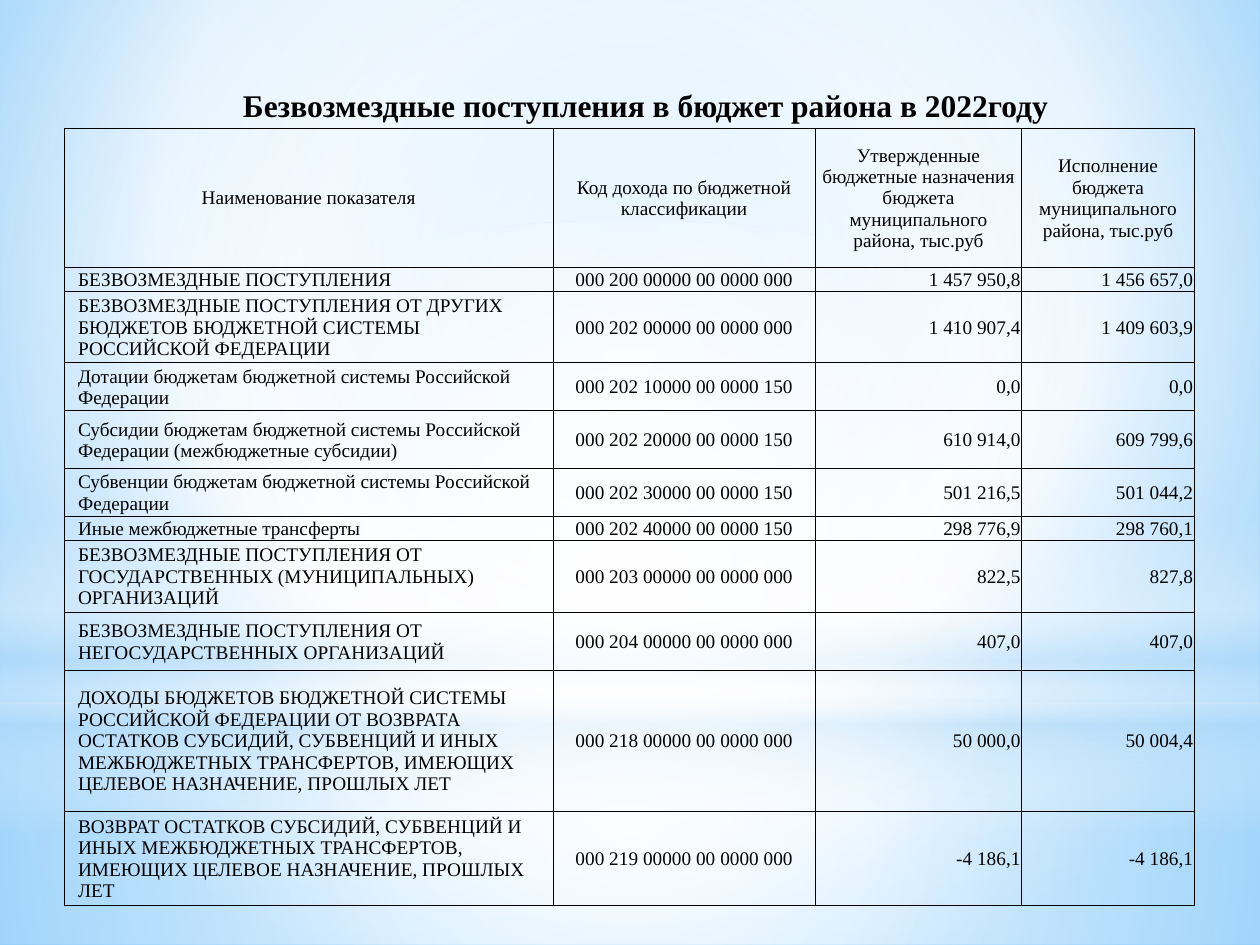
from dataclasses import dataclass

from lxml import etree
from pptx import Presentation
from pptx import util as u
from pptx.dml.color import RGBColor
from pptx.enum import shapes, text
from pptx.oxml.ns import qn

TITLE = "Безвозмездные поступления в бюджет района в 2022году"
HEADER = (
    "Наименование показателя",
    "Код дохода по бюджетной классификации",
    "Утвержденные бюджетные назначения бюджета муниципального района, тыс.руб",
    "Исполнение бюджета муниципального района, тыс.руб",
)
HEADER_HEIGHT = 1.1
# row height, indicator, income code, approved, executed
INCOME = [
    (0.19, "БЕЗВОЗМЕЗДНЫЕ ПОСТУПЛЕНИЯ",
     "000 200 00000 00 0000 000", "1 457 950,8", "1 456 657,0"),
    (0.57, "БЕЗВОЗМЕЗДНЫЕ ПОСТУПЛЕНИЯ ОТ ДРУГИХ БЮДЖЕТОВ БЮДЖЕТНОЙ СИСТЕМЫ РОССИЙСКОЙ ФЕДЕРАЦИИ",
     "000 202 00000 00 0000 000", "1 410 907,4", "1 409 603,9"),
    (0.38, "Дотации бюджетам бюджетной системы Российской Федерации",
     "000 202 10000 00 0000 150", "0,0", "0,0"),
    (0.46, "Субсидии бюджетам бюджетной системы Российской Федерации (межбюджетные субсидии)",
     "000 202 20000 00 0000 150", "610 914,0", "609 799,6"),
    (0.38, "Субвенции бюджетам бюджетной системы Российской Федерации",
     "000 202 30000 00 0000 150", "501 216,5", "501 044,2"),
    (0.19, "Иные межбюджетные трансферты",
     "000 202 40000 00 0000 150", "298 776,9", "298 760,1"),
    (0.57, "БЕЗВОЗМЕЗДНЫЕ ПОСТУПЛЕНИЯ ОТ ГОСУДАРСТВЕННЫХ (МУНИЦИПАЛЬНЫХ) ОРГАНИЗАЦИЙ",
     "000 203 00000 00 0000 000", "822,5", "827,8"),
    (0.46, "БЕЗВОЗМЕЗДНЫЕ ПОСТУПЛЕНИЯ ОТ НЕГОСУДАРСТВЕННЫХ ОРГАНИЗАЦИЙ",
     "000 204 00000 00 0000 000", "407,0", "407,0"),
    (1.12, "ДОХОДЫ БЮДЖЕТОВ БЮДЖЕТНОЙ СИСТЕМЫ РОССИЙСКОЙ ФЕДЕРАЦИИ ОТ ВОЗВРАТА ОСТАТКОВ "
     "СУБСИДИЙ, СУБВЕНЦИЙ И ИНЫХ МЕЖБЮДЖЕТНЫХ ТРАНСФЕРТОВ, ИМЕЮЩИХ ЦЕЛЕВОЕ НАЗНАЧЕНИЕ, ПРОШЛЫХ ЛЕТ",
     "000 218 00000 00 0000 000", "50 000,0", "50 004,4"),
    (0.75, "ВОЗВРАТ ОСТАТКОВ СУБСИДИЙ, СУБВЕНЦИЙ И ИНЫХ МЕЖБЮДЖЕТНЫХ ТРАНСФЕРТОВ, "
     "ИМЕЮЩИХ ЦЕЛЕВОЕ НАЗНАЧЕНИЕ, ПРОШЛЫХ ЛЕТ",
     "000 219 00000 00 0000 000", "-4 186,1", "-4 186,1"),
]
COLUMN_WIDTHS = (3.88, 2.08, 1.64, 1.37)


@dataclass(frozen=True)
class Theme:
    font: str = "Times New Roman"
    title_size: float = 18
    table_size: float = 11
    border: float = 0.5
    ink: str = "000000"
    white: str = "FFFFFF"
    mist: str = "B4DCFA"
    sky: str = "9ED5FF"
    azure: str = "5BB9FF"


T = Theme()
WIDTH, HEIGHT = 10, 7.5
HORIZON = 5.58
CENTRE = (50, 50, 50, 50)
RECT, OVAL = shapes.MSO_SHAPE.RECTANGLE, shapes.MSO_SHAPE.OVAL
BACKDROP = [(0, T.sky, 100), (60, T.white, 100), (100, T.azure, 100)]
# preset, top, height, gradient stops (position, colour, opacity), focus
GLOWS = [
    (RECT, HORIZON, HEIGHT - HORIZON,
     [(0, T.white, 91), (37, T.white, 76), (100, T.mist, 79)], CENTRE),
    (RECT, 0, HORIZON,
     [(0, T.white, 89), (48, T.white, 62), (100, T.mist, 79)], CENTRE),
    (RECT, 4.12, 2.5,
     [(0, T.white, 0), (29, T.white, 30), (45, T.mist, 40), (55, T.white, 26),
      (65, T.mist, 60), (100, T.white, 0)], None),
    (OVAL, 1.75, HORIZON, [(0, T.white, 100), (56, T.white, 0)], CENTRE),
]


def add(parent, tag, **attributes):
    return etree.SubElement(parent, qn(tag), {k: str(v) for k, v in attributes.items()})


def set_gradient(fill, owner, stops, focus):
    """Fill with stops, circling the focus rectangle or, without one, running down."""
    fill.gradient()
    gradient = owner.find(".//" + qn("a:gradFill"))
    for child in list(gradient):
        gradient.remove(child)
    stop_list = add(gradient, "a:gsLst")
    for position, colour, opacity in stops:
        stop = add(stop_list, "a:gs", pos=position * 1000)
        add(add(stop, "a:srgbClr", val=colour), "a:alpha", val=opacity * 1000)
    if focus:
        circle = add(gradient, "a:path", path="circle")
        add(circle, "a:fillToRect", **{side: share * 1000 for side, share in zip("ltrb", focus)})
    else:
        add(gradient, "a:lin", ang=90 * 60000, scaled=0)


def write(frame, words, size=T.table_size, bold=False, align=text.PP_ALIGN.LEFT):
    paragraph = frame.paragraphs[0]
    paragraph.alignment = align
    run = paragraph.add_run()
    run.text = words
    run.font.name, run.font.size, run.font.bold = T.font, u.Pt(size), bold
    run.font.color.rgb = RGBColor.from_string(T.ink)


def set_borders(cell):
    properties = cell._tc.get_or_add_tcPr()
    for place, side in enumerate("LRTB"):
        line = add(properties, f"a:ln{side}", w=u.Pt(T.border))
        add(add(line, "a:solidFill"), "a:srgbClr", val=T.ink)
        properties.insert(place, line)


def add_backdrop(slide):
    set_gradient(slide.background.fill, slide._element, BACKDROP, (20, 10, 20, 60))
    for preset, top, height, stops, focus in GLOWS:
        glow = slide.shapes.add_shape(preset, 0, u.Inches(top), u.Inches(WIDTH), u.Inches(height))
        glow.shadow.inherit = False
        glow.line.fill.background()
        set_gradient(glow.fill, glow._element, stops, focus)


def add_income_table(slide):
    heights = [HEADER_HEIGHT] + [entry[0] for entry in INCOME]
    rows = [HEADER] + [entry[1:] for entry in INCOME]
    table = slide.shapes.add_table(
        len(rows), len(HEADER), u.Inches(0.51), u.Inches(1.02),
        u.Inches(sum(COLUMN_WIDTHS)), u.Inches(sum(heights))).table
    table.first_row = table.horz_banding = False
    for column, width in zip(table.columns, COLUMN_WIDTHS):
        column.width = u.Inches(width)
    for row, height in zip(table.rows, heights):
        row.height = u.Inches(height)

    left, centre, right = text.PP_ALIGN.LEFT, text.PP_ALIGN.CENTER, text.PP_ALIGN.RIGHT
    for r, row in enumerate(rows):
        aligns = (left, centre, right, right) if r else (centre,) * len(HEADER)
        for c, (words, align) in enumerate(zip(row, aligns)):
            cell = table.cell(r, c)
            cell.fill.background()
            set_borders(cell)
            cell.margin_left = u.Inches(0.11 if align == left else 0.01)
            cell.margin_right = cell.margin_top = u.Inches(0.01)
            cell.margin_bottom = 0
            low = r == 1 and align == right
            cell.vertical_anchor = text.MSO_ANCHOR.BOTTOM if low else text.MSO_ANCHOR.MIDDLE
            write(cell.text_frame, words, align=align)


def add_title(slide):
    title = slide.shapes.title
    title.left, title.top, title.width, title.height = map(u.Inches, (0.91, 0.63, 8.43, 0.4))
    frame = title.text_frame
    frame.word_wrap = True
    frame.auto_size = text.MSO_AUTO_SIZE.NONE
    frame.vertical_anchor = text.MSO_ANCHOR.TOP
    write(frame, TITLE, size=T.title_size, bold=True, align=text.PP_ALIGN.CENTER)
    slide.shapes._spTree.append(title._element)  # bring to front


def main():
    deck = Presentation()
    deck.slide_width, deck.slide_height = u.Inches(WIDTH), u.Inches(HEIGHT)
    slide = deck.slides.add_slide(deck.slide_layouts[5])
    add_backdrop(slide)
    add_income_table(slide)
    add_title(slide)
    deck.save("out.pptx")


if __name__ == "__main__":
    main()
